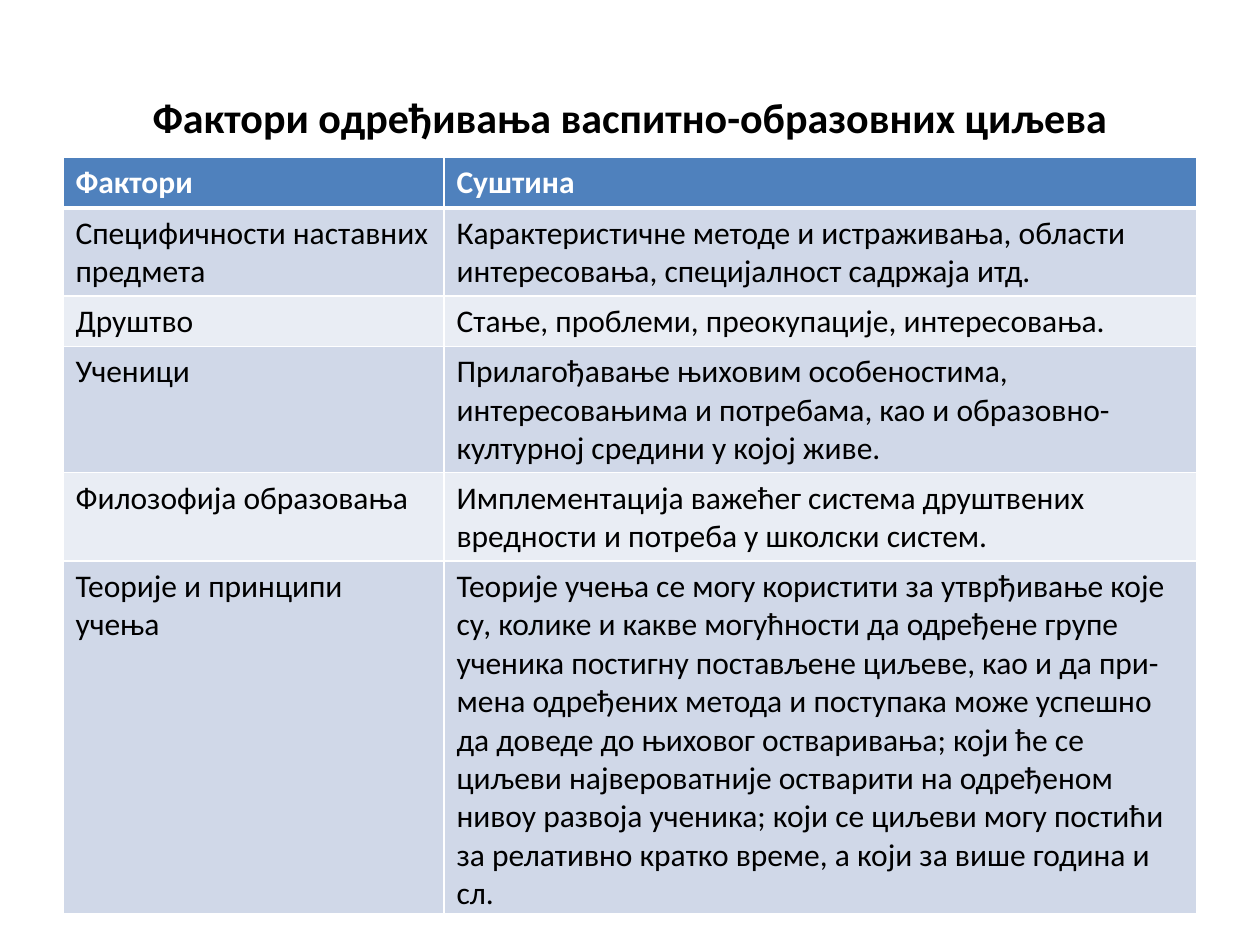
from dataclasses import dataclass

import lxml.etree
import pptx
import pptx.dml.color
import pptx.enum.text
import pptx.oxml.ns
import pptx.util

RGBColor = pptx.dml.color.RGBColor
BLACK = RGBColor(0x00, 0x00, 0x00)
WHITE = RGBColor(0xFF, 0xFF, 0xFF)
HEADER_BLUE = RGBColor(0x4F, 0x81, 0xBD)
BAND_DARK = RGBColor(0xD0, 0xD8, 0xE8)
BAND_LIGHT = RGBColor(0xE9, 0xED, 0xF4)

FONT = "Calibri"
PAGE_WIDTH = pptx.util.Inches(10)
PAGE_HEIGHT = pptx.util.Inches(7.5)
MARGIN = 0.05
CONTENT = 1 - 2 * MARGIN
COLUMN_SHARES = (0.336, 0.664)


@dataclass
class FactorRow:
    height: float
    factor: str
    essence: tuple[str, ...]


ROWS = (
    FactorRow(0.4, "Фактори", ("Суштина",)),
    FactorRow(0.69, "Специфичности наставних предмета", (
        "Карактеристичне методе и истраживања, области интересовања, "
        "специјалност садржаја итд.",)),
    FactorRow(0.4, "Друштво", ("Стање, проблеми, преокупације, интересовања.",)),
    FactorRow(0.99, "Ученици", (
        "Прилагођавање њиховим особеностима, интересовањима и потребама, "
        "као и образовно-културној средини у којој живе.",)),
    FactorRow(0.69, "Филозофија образовања", (
        "Имплементација важећег система друштвених вредности и потреба "
        "у школски систем.",)),
    FactorRow(2.77, "Теорије и принципи учења", (
        "Теорије учења се могу користити за утврђивање које су, колике и какве "
        "могућности да одређене групе ученика постигну постављене циљеве, "
        "као и да при-",
        "мена одређених метода и поступака може успешно да доведе до њиховог "
        "остваривања; који ће се циљеви највероватније остварити на одређеном "
        "нивоу развоја ученика; који се циљеви могу постићи за релативно кратко "
        "време, а који за више година и сл.")),
)


def write_paragraphs(frame, texts: tuple[str, ...], size: int,
                     color: RGBColor, bold: bool, align=None) -> None:
    for index, text in enumerate(texts):
        para = frame.paragraphs[0] if index == 0 else frame.add_paragraph()
        para.alignment = align
        span = para.add_run()
        span.text = text
        span.font.name = FONT
        span.font.size = pptx.util.Pt(size)
        span.font.bold = bold
        span.font.color.rgb = color


def add_borders(cell, top: int, bottom: int) -> None:
    """Draw white cell borders; must run before the fill is set."""
    properties = cell._tc.get_or_add_tcPr()
    qn = pptx.oxml.ns.qn
    for side, points in (("lnL", 1), ("lnR", 1), ("lnT", top), ("lnB", bottom)):
        line = lxml.etree.SubElement(properties, qn(f"a:{side}"),
                                     w=str(pptx.util.Pt(points)))
        fill = lxml.etree.SubElement(line, qn("a:solidFill"))
        lxml.etree.SubElement(fill, qn("a:srgbClr"), val=str(WHITE))


def add_title(page) -> None:
    box = page.shapes.add_textbox(
        int(PAGE_WIDTH * MARGIN), int(PAGE_HEIGHT * 0.04),
        int(PAGE_WIDTH * CONTENT), int(PAGE_HEIGHT / 6))
    frame = box.text_frame
    frame.word_wrap = True
    frame.vertical_anchor = pptx.enum.text.MSO_ANCHOR.MIDDLE
    write_paragraphs(frame, ("Фактори одређивања васпитно-образовних циљева",),
                     24, BLACK, True, pptx.enum.text.PP_ALIGN.CENTER)


def add_factor_table(page) -> None:
    width = int(PAGE_WIDTH * CONTENT)
    table = page.shapes.add_table(
        len(ROWS), len(COLUMN_SHARES), int(PAGE_WIDTH * MARGIN),
        int(PAGE_HEIGHT / 6), width,
        pptx.util.Inches(sum(row.height for row in ROWS))).table
    for column, share in zip(table.columns, COLUMN_SHARES):
        column.width = int(width * share)
    for index, row in enumerate(ROWS):
        table.rows[index].height = pptx.util.Inches(row.height)
        header = index == 0
        band = BAND_DARK if index % 2 else BAND_LIGHT
        for cell, texts in zip(table.rows[index].cells,
                               ((row.factor,), row.essence)):
            add_borders(cell, top=3 if index == 1 else 1, bottom=3 if header else 1)
            cell.fill.solid()
            cell.fill.fore_color.rgb = HEADER_BLUE if header else band
            write_paragraphs(cell.text_frame, texts, 18,
                             WHITE if header else BLACK, header)


def main() -> None:
    deck = pptx.Presentation()
    deck.slide_width, deck.slide_height = PAGE_WIDTH, PAGE_HEIGHT
    page = deck.slides.add_slide(deck.slide_layouts[6])
    add_title(page)
    add_factor_table(page)
    deck.save("out.pptx")


if __name__ == "__main__":
    main()
